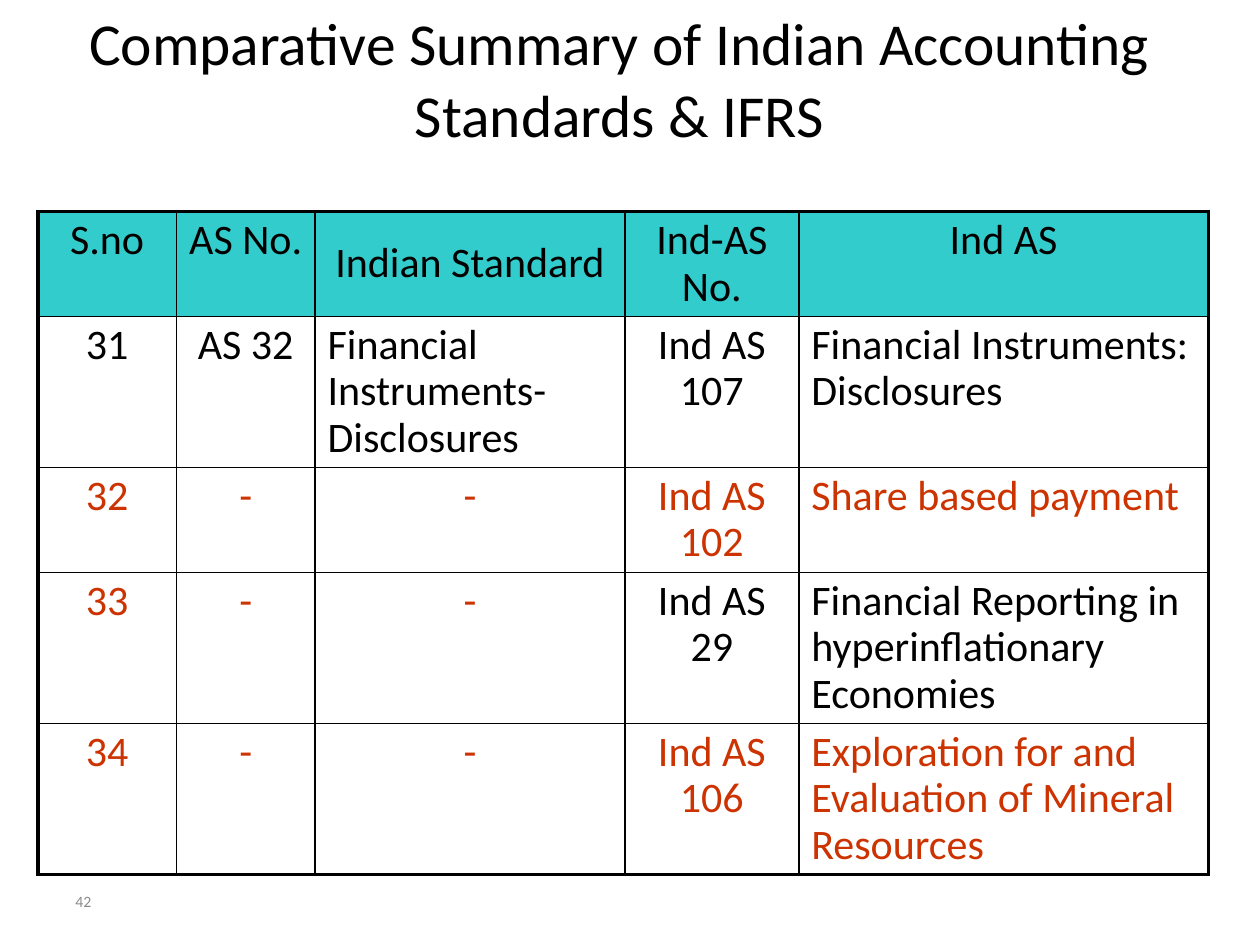
from lxml.etree import SubElement
from pptx import Presentation
from pptx.dml.color import RGBColor
from pptx.enum.text import MSO_ANCHOR, MSO_AUTO_SIZE, PP_ALIGN
from pptx.oxml.ns import qn
from pptx.util import Inches, Pt

BLACK = RGBColor(0x00, 0x00, 0x00)
WHITE = RGBColor(0xFF, 0xFF, 0xFF)
TEAL = RGBColor(0x33, 0xCC, 0xCC)
RED = RGBColor(0xCC, 0x33, 0x00)
GRAY = RGBColor(0x8C, 0x8C, 0x8C)

COLUMN_WIDTHS = [1.1, 1.1, 2.46, 1.38, 3.25]
ROW_HEIGHTS = [0.82, 1.18, 0.82, 1.18, 1.18]
ROWS = [
    ["S.no", "AS No.", "Indian Standard", "Ind-AS No.", "Ind AS"],
    ["31", "AS 32", "Financial Instruments-Disclosures", "Ind AS 107",
     "Financial Instruments: Disclosures"],
    ["32", "-", "-", "Ind AS 102", "Share based payment"],
    ["33", "-", "-", "Ind AS 29",
     "Financial Reporting in hyperinflationary Economies"],
    ["34", "-", "-", "Ind AS 106",
     "Exploration for and Evaluation of Mineral Resources"],
]
ROW_COLORS = [
    [BLACK] * 5,
    [BLACK] * 5,
    [RED] * 5,
    [RED] * 3 + [BLACK] * 2,
    [RED] * 5,
]
OUTER_BORDER, INNER_BORDER = 2.25, 1


def write_text(text_frame, text, size, color, alignment):
    text_frame.text = text
    paragraph = text_frame.paragraphs[0]
    paragraph.alignment = alignment
    font_format = {"name": "Calibri", "size": Pt(size), "bold": False}
    for name, value in font_format.items():
        setattr(paragraph.font, name, value)
    paragraph.font.color.rgb = color
    return paragraph


def set_frame(text_frame, anchor):
    frame_format = {"word_wrap": True, "auto_size": MSO_AUTO_SIZE.NONE,
                    "vertical_anchor": anchor}
    for name, value in frame_format.items():
        setattr(text_frame, name, value)


def add_title(slide):
    title = slide.shapes.title
    position = {"left": 0.25, "top": 0, "width": 9.33, "height": 1.25}
    for name, value in position.items():
        setattr(title, name, Inches(value))
    set_frame(title.text_frame, MSO_ANCHOR.TOP)
    write_text(title.text_frame,
               "Comparative Summary of Indian Accounting Standards & IFRS",
               34, BLACK, PP_ALIGN.CENTER)


def add_page_number(slide):
    box = slide.shapes.add_textbox(Inches(0.5), Inches(6.95),
                                   Inches(2.33), Inches(0.4))
    set_frame(box.text_frame, MSO_ANCHOR.MIDDLE)
    write_text(box.text_frame, "42", 9, GRAY, PP_ALIGN.LEFT)


def set_borders(cell, row, column):
    """Draw thick lines on the table's outside edges and thin ones inside."""
    outer_sides = {
        "L": column == 0,
        "R": column == len(COLUMN_WIDTHS) - 1,
        "T": row == 0,
        "B": row == len(ROWS) - 1,
    }
    properties = cell._tc.get_or_add_tcPr()
    for side, is_outer in outer_sides.items():
        width = Pt(OUTER_BORDER if is_outer else INNER_BORDER)
        line = SubElement(properties, qn(f"a:ln{side}"), w=str(width))
        fill = SubElement(line, qn("a:solidFill"))
        SubElement(fill, qn("a:srgbClr"), val=str(BLACK))


def fill_cell(cell, row, column):
    is_header = row == 0
    text = ROWS[row][column]
    set_borders(cell, row, column)
    cell.fill.solid()
    cell.fill.fore_color.rgb = TEAL if is_header else WHITE
    is_middle = text == "Indian Standard"
    cell.vertical_anchor = MSO_ANCHOR.MIDDLE if is_middle else MSO_ANCHOR.TOP
    is_centered = is_header or column in (0, 1, 3) or text == "-"
    paragraph = write_text(cell.text_frame, text, 24, ROW_COLORS[row][column],
                           PP_ALIGN.CENTER if is_centered else PP_ALIGN.LEFT)
    paragraph.line_spacing = 0.9


def add_standards_table(slide):
    frame = slide.shapes.add_table(
        len(ROWS), len(COLUMN_WIDTHS), Inches(0.3), Inches(1.68),
        Inches(sum(COLUMN_WIDTHS)), Inches(sum(ROW_HEIGHTS)))
    table = frame.table
    table.first_row = False
    table.horz_banding = False
    for column, width in zip(table.columns, COLUMN_WIDTHS):
        column.width = Inches(width)
    for row, height in zip(table.rows, ROW_HEIGHTS):
        row.height = Inches(height)
    for row in range(len(ROWS)):
        for column in range(len(COLUMN_WIDTHS)):
            fill_cell(table.cell(row, column), row, column)


def main():
    presentation = Presentation()
    presentation.slide_width = Inches(10)
    presentation.slide_height = Inches(7.5)
    slide = presentation.slides.add_slide(presentation.slide_layouts[5])
    add_page_number(slide)
    add_standards_table(slide)
    add_title(slide)
    presentation.save("out.pptx")


if __name__ == "__main__":
    main()
